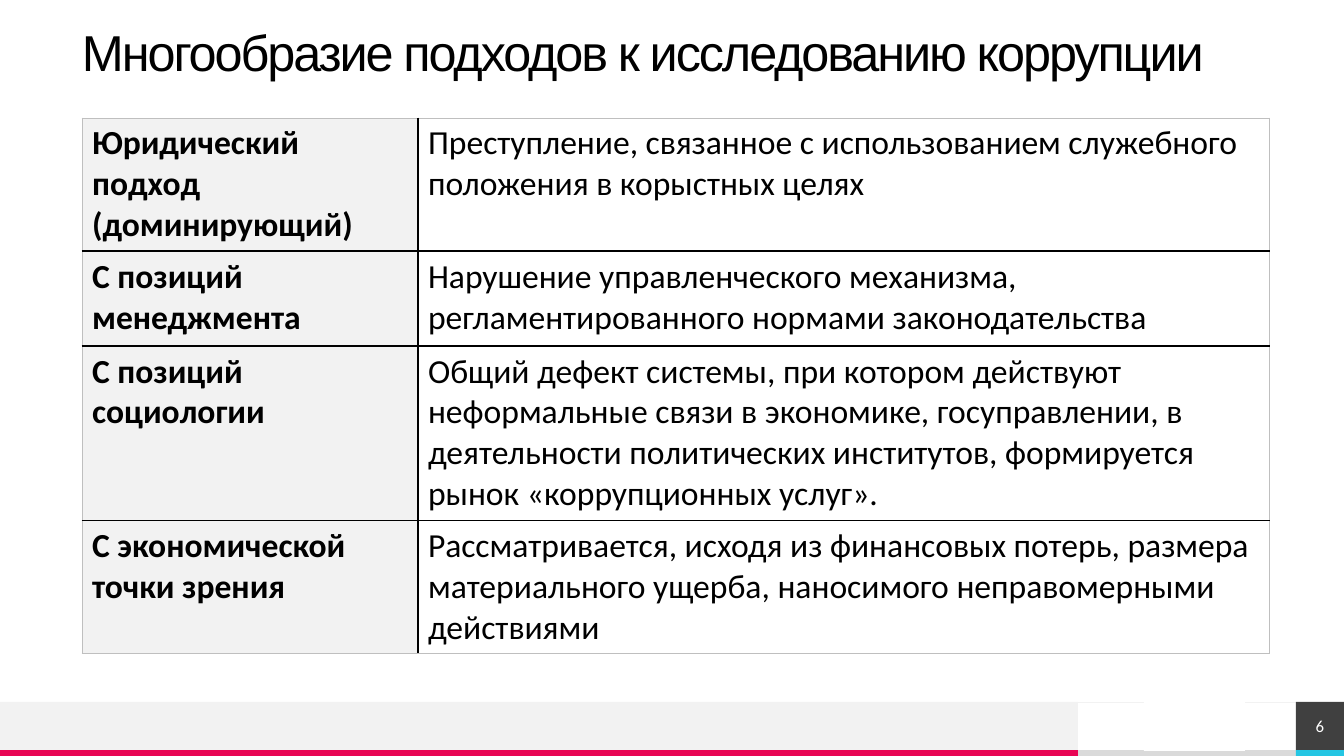
from lxml import etree
from pptx import Presentation
from pptx.dml.color import RGBColor
from pptx.enum.shapes import MSO_CONNECTOR, MSO_SHAPE
from pptx.enum.text import MSO_ANCHOR, MSO_AUTO_SIZE, PP_ALIGN
from pptx.oxml.ns import qn
from pptx.util import Emu, Pt

RECTANGLE = MSO_SHAPE.RECTANGLE
STRAIGHT = MSO_CONNECTOR.STRAIGHT
MIDDLE = MSO_ANCHOR.MIDDLE
LEFT, CENTER = PP_ALIGN.LEFT, PP_ALIGN.CENTER

BLACK = RGBColor(0x00, 0x00, 0x00)
WHITE = RGBColor(0xFF, 0xFF, 0xFF)
PALE = RGBColor(0xF2, 0xF2, 0xF2)
SILVER = RGBColor(0xDA, 0xDA, 0xDA)
FRAME = RGBColor(0xBF, 0xBF, 0xBF)
DARK = RGBColor(0x40, 0x40, 0x40)
CRIMSON = RGBColor(0xE8, 0x05, 0x54)
CYAN = RGBColor(0x25, 0xC6, 0xE3)

# Content
TITLE = "Многообразие подходов к исследованию коррупции"
PAGE_NUMBER = "6"
# Approach, definition, row height in px
APPROACHES = [
    ("Юридический подход (доминирующий)",
     "Преступление, связанное с использованием служебного положения в корыстных целях", 133),
    ("С позиций менеджмента",
     "Нарушение управленческого механизма, регламентированного нормами законодательства", 95),
    ("С позиций социологии",
     "Общий дефект системы, при котором действуют неформальные связи в экономике, "
     "госуправлении, в деятельности политических институтов, формируется рынок "
     "«коррупционных услуг».", 174),
    ("С экономической точки зрения",
     "Рассматривается, исходя из финансовых потерь, размера материального ущерба, "
     "наносимого неправомерными действиями", 133),
]

# Layout in px
SLIDE_WIDTH, SLIDE_HEIGHT = 1344, 756
TITLE_BOX = (82, 22, 1188, 67)
TABLE_LEFT, TABLE_TOP = 82, 118
COLUMN_WIDTHS = (336, 852)
FOOTER_TOP, STRIPE_TOP = 702, 750
FOOTER_SPLIT, NUMBER_LEFT = 1078, 1296
FOOTER_HEIGHT = STRIPE_TOP - FOOTER_TOP
STRIPE_HEIGHT = SLIDE_HEIGHT - STRIPE_TOP
NUMBER_WIDTH = SLIDE_WIDTH - NUMBER_LEFT
FOOTER_BLOCKS = [
    (FOOTER_SPLIT, STRIPE_TOP, NUMBER_LEFT - FOOTER_SPLIT, STRIPE_HEIGHT, SILVER),
    (0, FOOTER_TOP, FOOTER_SPLIT, FOOTER_HEIGHT, PALE),
    (0, STRIPE_TOP, FOOTER_SPLIT, STRIPE_HEIGHT, CRIMSON),
    (NUMBER_LEFT, STRIPE_TOP, NUMBER_WIDTH, STRIPE_HEIGHT, CYAN),
]
EMU_PER_PX = 12192000 / SLIDE_WIDTH


def px(length):
    return Emu(round(length * EMU_PER_PX))


def add_block(slide, left, top, width, height, color):
    shape = slide.shapes.add_shape(RECTANGLE, px(left), px(top), px(width), px(height))
    shape.shadow.inherit = False
    shape.fill.solid()
    shape.fill.fore_color.rgb = color
    shape.line.fill.background()
    return shape


def add_run(paragraph, text, size, font, color, bold=False):
    run = paragraph.add_run()
    run.text = text
    run.font.size = Pt(size)
    run.font.name = font
    run.font.bold = bold
    run.font.color.rgb = color
    return run


def clear_insets(frame):
    frame.margin_left = frame.margin_right = frame.margin_top = frame.margin_bottom = 0
    frame.vertical_anchor = MIDDLE


def set_border(cell, side, color, width):
    border = etree.SubElement(cell._tc.get_or_add_tcPr(), qn("a:" + side), w=str(Pt(width)))
    fill = etree.SubElement(border, qn("a:solidFill"))
    etree.SubElement(fill, qn("a:srgbClr"), val=str(color))


def add_footer(slide):
    for block in FOOTER_BLOCKS:
        add_block(slide, *block)
    rule = slide.shapes.add_connector(
        STRAIGHT, px(SLIDE_WIDTH), px(FOOTER_TOP), 0, px(FOOTER_TOP))
    rule.line.color.rgb = PALE
    rule.line.width = Pt(0.5)
    etree.SubElement(rule._element.spPr, qn("a:effectLst"))


def add_title(slide):
    title = slide.shapes.title
    title.left, title.top, title.width, title.height = map(px, TITLE_BOX)
    title.fill.solid()
    title.fill.fore_color.rgb = WHITE
    frame = title.text_frame
    frame.word_wrap = True
    frame.auto_size = MSO_AUTO_SIZE.NONE
    clear_insets(frame)
    paragraph = frame.paragraphs[0]
    paragraph.alignment = LEFT
    paragraph.line_spacing = 0.9
    run = add_run(paragraph, TITLE, 36, "Arial", BLACK)
    run.font._element.set("spc", "-150")


def add_page_number(slide):
    number = add_block(slide, NUMBER_LEFT, FOOTER_TOP, NUMBER_WIDTH, FOOTER_HEIGHT, DARK)
    clear_insets(number.text_frame)
    paragraph = number.text_frame.paragraphs[0]
    paragraph.alignment = CENTER
    add_run(paragraph, PAGE_NUMBER, 12, "Calibri", WHITE)
    add_block(slide, 1144, 701, 101, 50, WHITE)


def add_approach_table(slide):
    last_row, last_column = len(APPROACHES) - 1, len(COLUMN_WIDTHS) - 1
    total_height = sum(height for _, _, height in APPROACHES)
    table = slide.shapes.add_table(
        len(APPROACHES), len(COLUMN_WIDTHS), px(TABLE_LEFT), px(TABLE_TOP),
        px(sum(COLUMN_WIDTHS)), px(total_height)).table
    table.first_row = table.horz_banding = False
    for column, width in zip(table.columns, COLUMN_WIDTHS):
        column.width = px(width)
    for row, (approach, definition, height) in enumerate(APPROACHES):
        table.rows[row].height = px(height)
        for column, text in enumerate((approach, definition)):
            cell = table.cell(row, column)
            # Grey outer frame, black inner lines
            outer_sides = {"lnL": column == 0, "lnR": column == last_column,
                           "lnT": row == 0, "lnB": row == last_row}
            for side, outer in outer_sides.items():
                set_border(cell, side, FRAME if outer else BLACK, 0.75 if outer else 1)
            cell.fill.solid()
            cell.fill.fore_color.rgb = PALE if column == 0 else WHITE
            add_run(cell.text_frame.paragraphs[0], text, 24, "Calibri", BLACK, column == 0)


def main():
    presentation = Presentation()
    presentation.slide_width = px(SLIDE_WIDTH)
    presentation.slide_height = px(SLIDE_HEIGHT)
    slide = presentation.slides.add_slide(presentation.slide_layouts[5])
    add_footer(slide)
    add_title(slide)
    add_page_number(slide)
    add_approach_table(slide)
    presentation.save("out.pptx")


if __name__ == "__main__":
    main()
